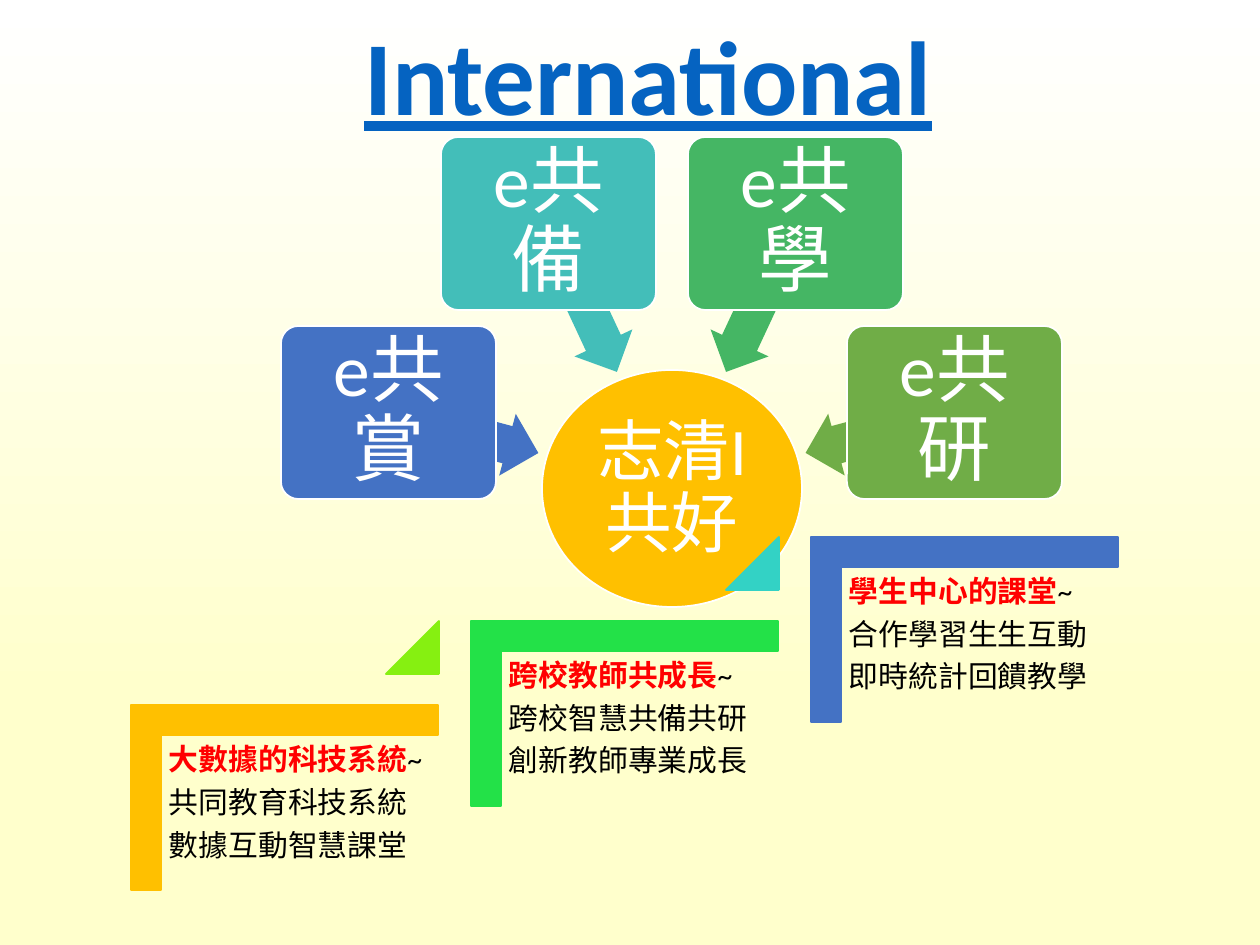
from lxml.etree import SubElement
from pptx import Presentation
from pptx.dml.color import RGBColor
from pptx.enum.shapes import MSO_SHAPE
from pptx.enum.text import MSO_ANCHOR, MSO_AUTO_SIZE, PP_ALIGN
from pptx.oxml.ns import qn
from pptx.util import Emu, Pt

EMU_PER_PX = 914400 / 126
WHITE, BLACK, RED = "FFFFFF", "000000", "FF0000"
GOLD, BLUE = "FFC000", "4472C4"


def px(length):
    return Emu(round(length * EMU_PER_PX))


def color(hex_string):
    return RGBColor.from_string(hex_string)


class SlideBuilder:
    font_name = "Calibri"
    line_spacing = 0.9

    def __init__(self, slide):
        self.slide = slide

    def background(self, top, bottom):
        fill = self.slide.background.fill
        fill.gradient()
        fill.gradient_angle = 270
        for stop, position, value in zip(fill.gradient_stops, (0, 0.74), (top, bottom)):
            stop.position = position
            stop.color.rgb = color(value)

    def shape(self, kind, box, fill, line=None, rotation=0, adjustments=()):
        shape = self.slide.shapes.add_shape(kind, *map(px, box))
        shape.shadow.inherit = False
        shape.rotation = rotation
        for index, value in enumerate(adjustments):
            shape.adjustments[index] = value
        shape.fill.solid()
        shape.fill.fore_color.rgb = color(fill)
        if line:
            shape.line.color.rgb = color(line)
            shape.line.width = Pt(1)
        else:
            shape.line.fill.background()
        return shape

    def corner(self, box, fill):
        # The L-shaped preset is missing from MSO_SHAPE, so it is set in XML
        shape = self.shape(MSO_SHAPE.RECTANGLE, box, fill, fill, rotation=90)
        geometry = shape.element.spPr.find(qn("a:prstGeom"))
        geometry.set("prst", "corner")
        guides = geometry.find(qn("a:avLst"))
        for name in ("adj1", "adj2"):
            SubElement(guides, qn("a:gd"), name=name, fmla="val 16100")

    def run(self, paragraph, text, size, value, bold=False, underline=None):
        run = paragraph.add_run()
        run.text = text
        font = run.font
        font.name, font.size = self.font_name, Pt(size)
        font.bold, font.underline = bold, underline
        font.color.rgb = color(value)

    def title(self, text, box, size, value):
        title = self.slide.shapes.title
        title.left, title.top, title.width, title.height = map(px, box)
        frame = title.text_frame
        frame.auto_size = MSO_AUTO_SIZE.NONE
        frame.vertical_anchor = MSO_ANCHOR.MIDDLE
        paragraph = frame.paragraphs[0]
        paragraph.alignment = PP_ALIGN.CENTER
        paragraph.line_spacing = self.line_spacing
        self.run(paragraph, text, size, value, bold=True, underline=True)

    def text(self, box, paragraphs, size, inset, centered=False):
        """Each paragraph is a list of (text, color, bold) runs."""
        frame = self.slide.shapes.add_textbox(*map(px, box)).text_frame
        frame.word_wrap = True
        frame.margin_left = frame.margin_right = px(inset)
        frame.margin_top = frame.margin_bottom = px(inset)
        frame.vertical_anchor = MSO_ANCHOR.MIDDLE if centered else MSO_ANCHOR.TOP
        for index, runs in enumerate(paragraphs):
            paragraph = frame.add_paragraph() if index else frame.paragraphs[0]
            paragraph.alignment = PP_ALIGN.CENTER if centered else PP_ALIGN.LEFT
            paragraph.line_spacing = self.line_spacing
            if len(paragraphs) > 1:
                paragraph.space_after = Pt(6)
            for text, value, bold in runs:
                self.run(paragraph, text, size, value, bold)

    def spoke(self, label, fill, left, top, arrow_box, rotation):
        self.shape(MSO_SHAPE.LEFT_ARROW, arrow_box, fill,
                   rotation=rotation, adjustments=(0.6, 0.5))
        self.shape(MSO_SHAPE.ROUNDED_RECTANGLE, (left, top, 215, 173), fill,
                   WHITE, adjustments=(0.1,))
        self.text((left + 5, top + 5, 205, 163), [[(label, WHITE, False)]],
                  42, 11, centered=True)

    def step(self, index, fill, heading, lines, triangle_fill):
        right, up = 340 * index, 84 * index
        self.corner((192 + right, 644 - up, 185, 307), fill)
        paragraphs = [[(heading, RED, True), ("~", BLACK, False)]]
        paragraphs += [[(line, BLACK, False)] for line in lines]
        self.text((160 + right, 736 - up, 278, 243), paragraphs, 17, 9)
        if triangle_fill:
            self.shape(MSO_SHAPE.ISOSCELES_TRIANGLE, (386 + right, 621 - up, 53, 53),
                       triangle_fill, triangle_fill, adjustments=(1,))


def main():
    presentation = Presentation()
    presentation.slide_width, presentation.slide_height = px(1260), px(945)
    slide = presentation.slides.add_slide(presentation.slide_layouts[5])
    builder = SlideBuilder(slide)
    builder.background(WHITE, "FFFFCC")
    builder.title("International", (105, 11, 1086, 141), 60, "0563C1")

    # Hub
    builder.shape(MSO_SHAPE.OVAL, (542, 370, 260, 237), GOLD, WHITE)
    builder.text((580, 406, 184, 168), [[("志清I 共好", WHITE, False)]],
                 38, 4, centered=True)

    # Spokes pointing at the hub
    spokes = [
        ("e共賞", BLUE, 281, 326, (387, 401, 154, 64), 195),
        ("e共備", "43BEB9", 441, 137, (501, 266, 163, 64), 245),
        ("e共學", "45B664", 688, 137, (679, 266, 163, 64), 295),
        ("e共研", "70AD47", 847, 326, (803, 401, 154, 64), 345),
    ]
    for spoke in spokes:
        builder.spoke(*spoke)

    # Rising steps
    steps = [
        (GOLD, "大數據的科技系統", ("共同教育科技系統", "數據互動智慧課堂"), "86F011"),
        ("23E148", "跨校教師共成長", ("跨校智慧共備共研", "創新教師專業成長"), "33D2C5"),
        (BLUE, "學生中心的課堂", ("合作學習生生互動", "即時統計回饋教學"), None),
    ]
    for index, step in enumerate(steps):
        builder.step(index, *step)

    presentation.save("out.pptx")


if __name__ == "__main__":
    main()
